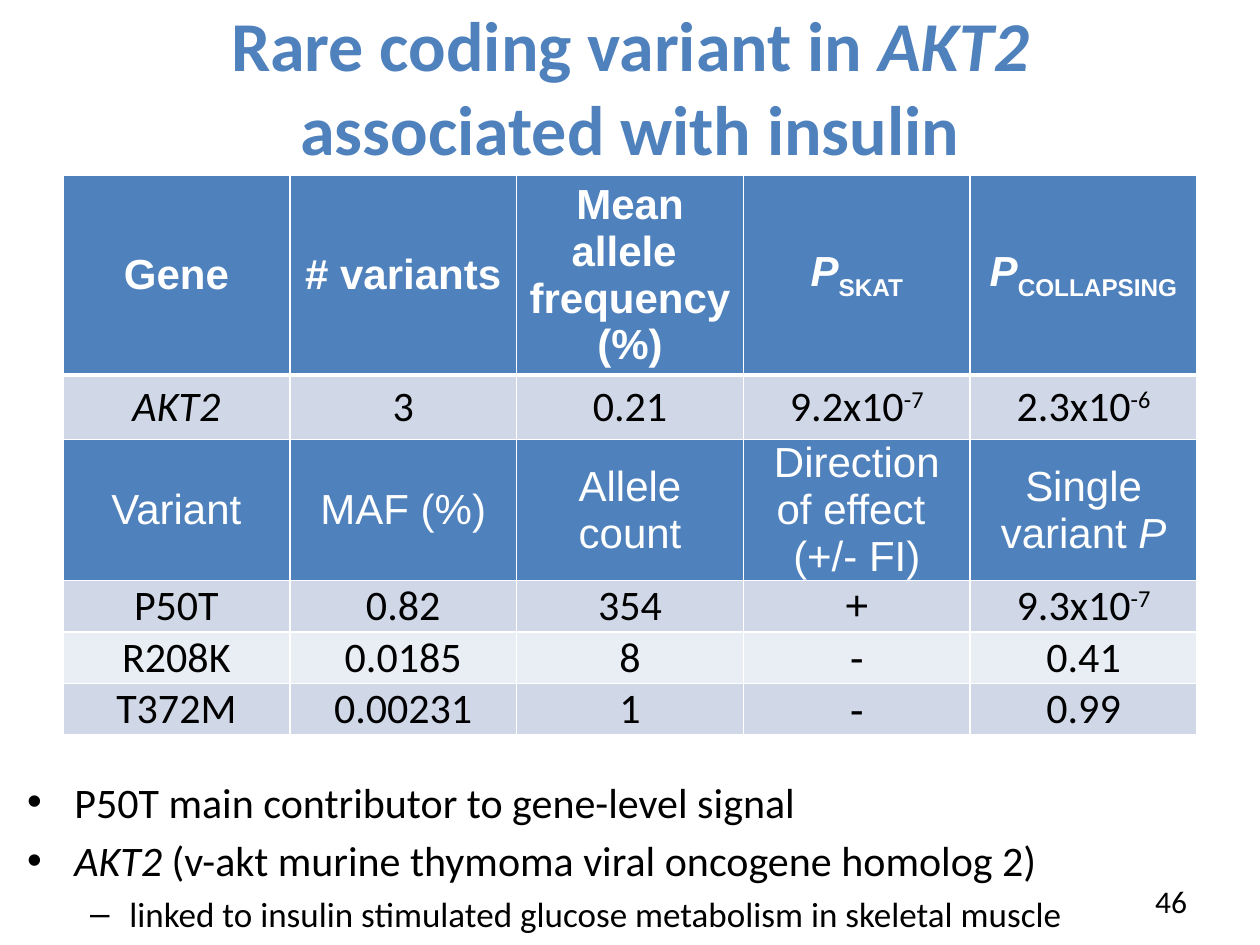
from lxml import etree
from pptx import Presentation
from pptx.dml.color import RGBColor
from pptx.enum import text as t
from pptx.oxml import ns
from pptx.util import Cm, Pt

BLUE, PALE, LIGHT = "4F81BD", "D0D8E8", "E9EDF4"
WHITE, BLACK = "FFFFFF", "000000"
MID, CENTER = t.MSO_ANCHOR.MIDDLE, t.PP_ALIGN.CENTER

# A line of text is a list of runs; a run is (text, mark).
# Marks: "" plain, "i" italic, "sub" and "sup" for shifted text.
TITLE = [("Rare coding variant in ", ""), ("AKT2", "i"), (" associated with insulin", "")]

# Cells hold plain text or a list of lines.
GENE = ["Gene", "# variants",
        [[("Mean allele ", "")], [("frequency (%)", "")]],
        [[("P", "i"), ("SKAT", "sub")]],
        [[("P", "i"), ("COLLAPSING", "sub")]]]
AKT2 = [[[("AKT2", "i")]], "3", "0.21",
        [[("9.2x10", ""), ("-7", "sup")]],
        [[("2.3x10", ""), ("-6", "sup")]]]
VARIANT = ["Variant", "MAF (%)", "Allele count",
           [[("Direction of effect ", "")], [("(+/- FI)", "")]],
           [[("Single variant ", ""), ("P", "i")]]]
P50T = ["P50T", "0.82", "354", "+", [[("9.3x10", ""), ("-7", "sup")]]]
R208K = ["R208K", "0.0185", "8", "-", "0.41"]
T372M = ["T372M", "0.00231", "1", "-", "0.99"]

# cells, height in cm, fill
ROWS = [(GENE, 3.99, BLUE), (AKT2, 1.3, PALE), (VARIANT, 2.84, BLUE),
        (P50T, 1.04, PALE), (R208K, 1.04, LIGHT), (T372M, 1.04, PALE)]

# bullet, size, left margin and hanging indent in cm, runs
NOTES = [
    ("•", 24, 0.95, 0.95, [("P50T main contributor to gene-level signal", "")]),
    ("•", 24, 0.95, 0.95, [("AKT2", "i"), (" (v-akt murine thymoma viral oncogene homolog 2)", "")]),
    ("–", 20, 2.06, 0.79,
     [("linked to insulin stimulated glucose metabolism in skeletal muscle", "")]),
]
SHIFT = {"sub": "-25000", "sup": "30000"}


def rgb(code):
    return RGBColor.from_string(code)


def write(par, runs, size, color=BLACK, face="Calibri", bold=False):
    for words, mark in runs:
        run = par.add_run()
        run.text = words
        font = run.font
        font.size, font.name, font.bold = Pt(size), face, bold
        font.italic = mark == "i"
        font.color.rgb = rgb(color)
        if mark in SHIFT:
            font._element.set("baseline", SHIFT[mark])


def edge(cell, side, width):
    props = cell._tc.get_or_add_tcPr()
    line = etree.SubElement(props, ns.qn("a:ln" + side), w=str(Pt(width)))
    fill = etree.SubElement(line, ns.qn("a:solidFill"))
    etree.SubElement(fill, ns.qn("a:srgbClr"), val=WHITE)


def bullet(par, sign, left, hang):
    props = par._p.get_or_add_pPr()
    props.set("marL", str(Cm(left)))
    props.set("indent", str(-Cm(hang)))
    etree.SubElement(props, ns.qn("a:buFont"), typeface="Arial")
    etree.SubElement(props, ns.qn("a:buChar"), char=sign)


def add_box(slide, *place):
    frame = slide.shapes.add_textbox(*map(Cm, place)).text_frame
    frame.word_wrap = True
    return frame


def add_title(slide):
    title = slide.shapes.title
    title.left, title.top, title.width, title.height = map(Cm, (1.27, 0.13, 22.86, 3.18))
    frame = title.text_frame
    frame.auto_size = t.MSO_AUTO_SIZE.NONE
    frame.vertical_anchor = MID
    par = frame.paragraphs[0]
    par.alignment = CENTER
    write(par, TITLE, 40, BLUE, bold=True)


def fill_cell(cell, lines, fill, row, col):
    for side in "LRTB":
        thick = (row, side) in ((0, "B"), (1, "T"))
        edge(cell, side, 3 if thick else 1)
    cell.fill.solid()
    cell.fill.fore_color.rgb = rgb(fill)
    cell.vertical_anchor = MID
    if row > 1 or (row == 1 and col):
        cell.margin_left = cell.margin_right = Cm(0.18)
        cell.margin_top = cell.margin_bottom = 0
    if isinstance(lines, str):
        lines = [[(lines, "")]]
    head = fill == BLUE
    sign = lines[0][0][0] in ("+", "-")
    frame = cell.text_frame
    for n, runs in enumerate(lines):
        par = frame.add_paragraph() if n else frame.paragraphs[0]
        par.alignment = CENTER
        write(par, runs, 24, WHITE if head else BLACK,
              "Arial" if head or sign else "Calibri", row == 0)


def add_grid(slide):
    high = sum(row[1] for row in ROWS)
    grid = slide.shapes.add_table(len(ROWS), len(GENE), Cm(1.27), Cm(3.53),
                                  Cm(22.86), Cm(high)).table
    for r, (cells, tall, fill) in enumerate(ROWS):
        grid.rows[r].height = Cm(tall)
        for c, lines in enumerate(cells):
            fill_cell(grid.cell(r, c), lines, fill, r, c)


def add_notes(slide):
    frame = add_box(slide, 0.3, 15.52, 24.61, 4.17)
    for n, (sign, size, left, hang, runs) in enumerate(NOTES):
        par = frame.add_paragraph() if n else frame.paragraphs[0]
        par.space_before = Pt(size * 0.2)
        bullet(par, sign, left, hang)
        write(par, runs, size)


def add_number(slide):
    frame = add_box(slide, 20.37, 17.65, 3.81, 1.02)
    frame.vertical_anchor = MID
    par = frame.paragraphs[0]
    par.alignment = t.PP_ALIGN.RIGHT
    write(par, [("46", "")], 18)


def main():
    deck = Presentation()
    deck.slide_width, deck.slide_height = Cm(25.4), Cm(19.05)
    slide = deck.slides.add_slide(deck.slide_layouts[5])
    add_grid(slide)
    add_title(slide)
    add_notes(slide)
    add_number(slide)
    deck.save("out.pptx")


if __name__ == "__main__":
    main()
